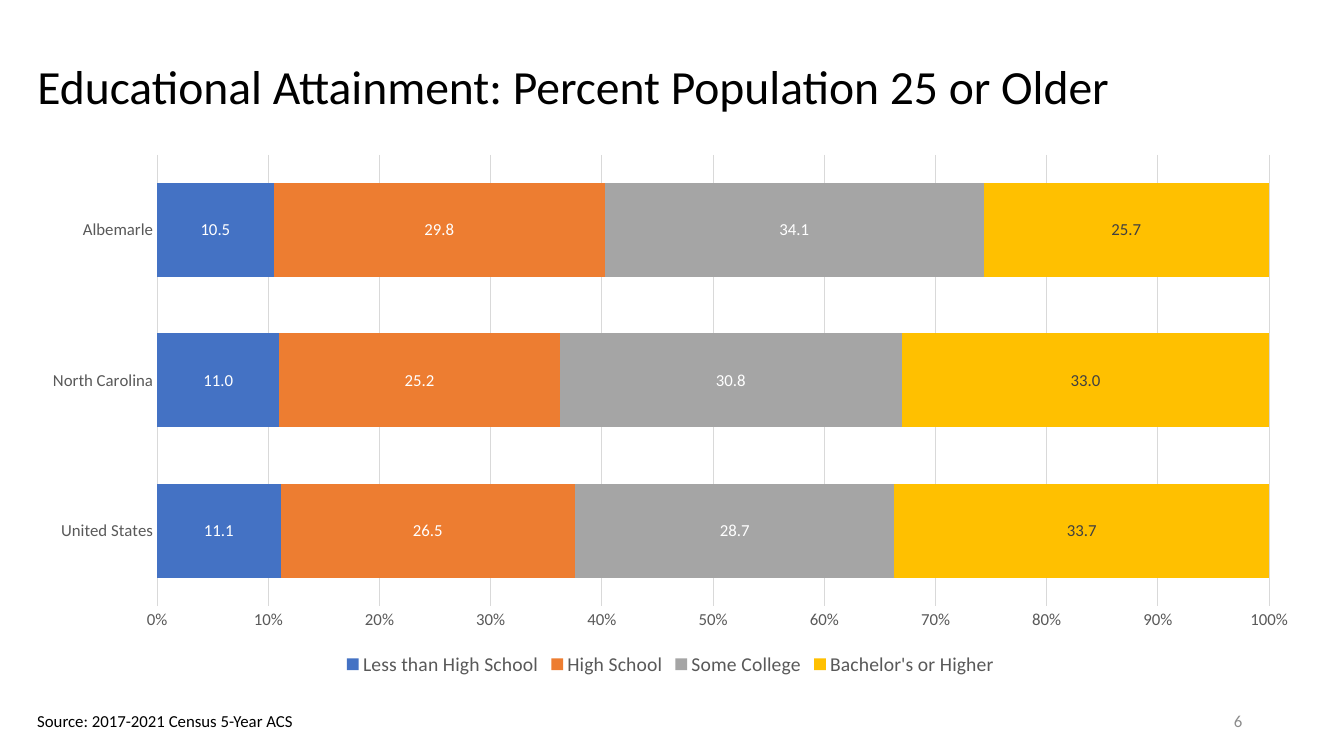
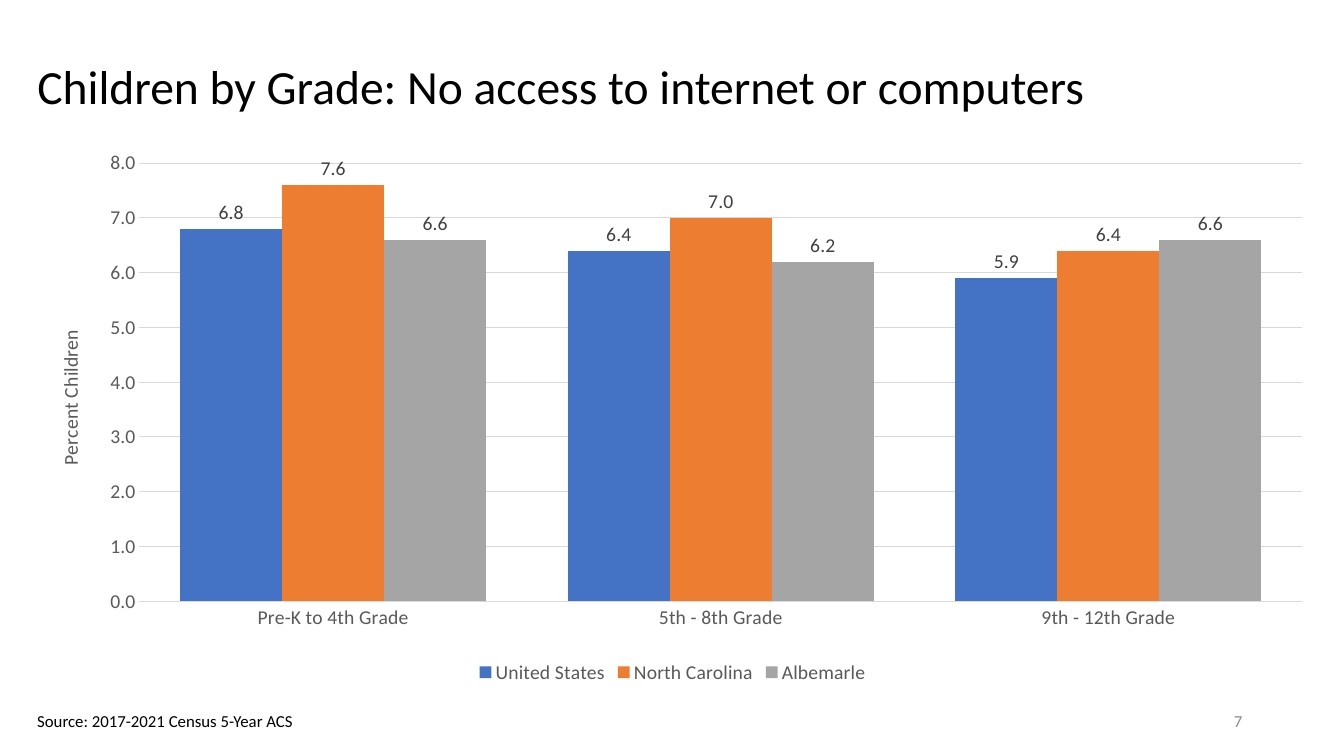
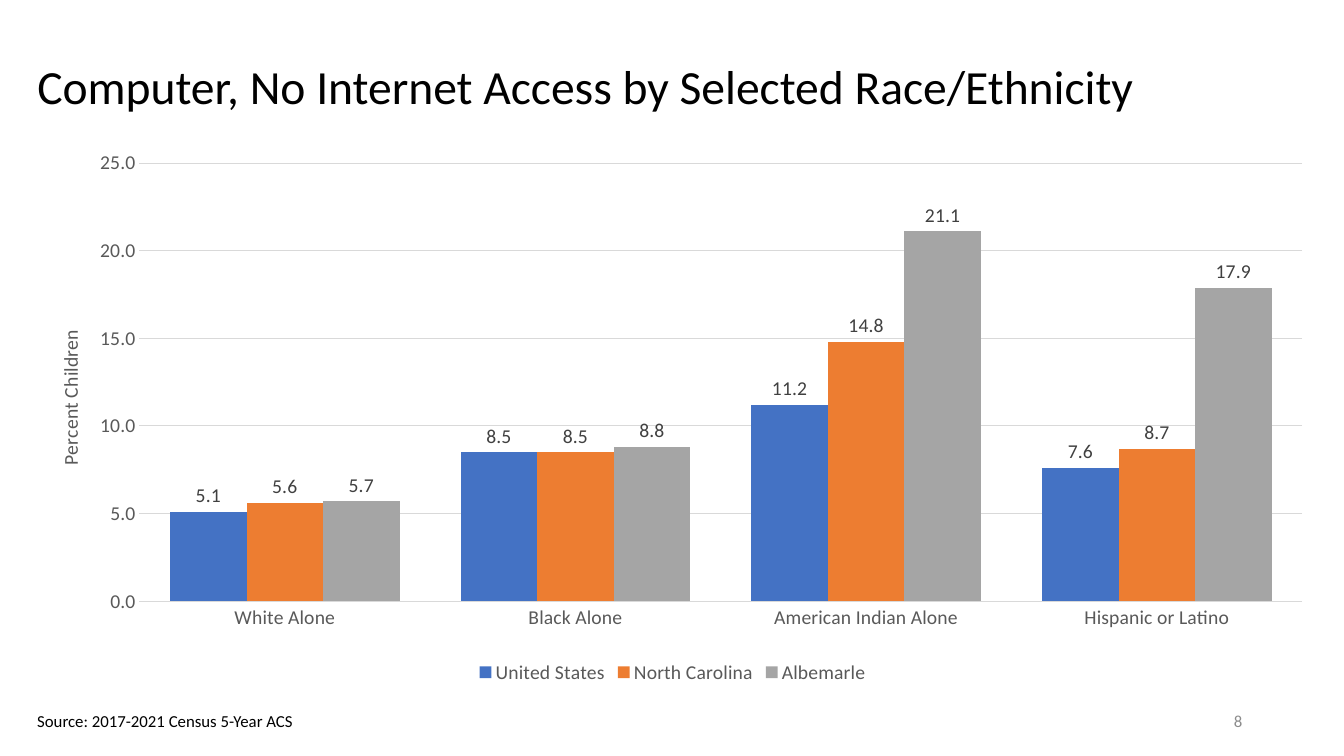
import pptx
import pptx.chart.data
import pptx.dml.color
import pptx.enum.chart
import pptx.enum.text
import pptx.oxml
import pptx.oxml.ns
import pptx.util

Inches, Pt = pptx.util.Inches, pptx.util.Pt
ChartType = pptx.enum.chart.XL_CHART_TYPE
LabelPosition = pptx.enum.chart.XL_LABEL_POSITION
Align = pptx.enum.text.PP_ALIGN

FONT = "Calibri"
COLORS = {
    "text": "000000", "axis": "595959", "grid": "D9D9D9", "number": "8C8C8C",
    "dark_label": "404040", "light_label": "FFFFFF",
}
SERIES_COLORS = ["4472C4", "ED7D31", "A5A5A5", "FFC000"]
NUMBER_FORMAT = "#,##0.0"
SOURCE = "Source: 2017-2021 Census 5-Year ACS"
FIRST_NUMBER = 6
LEFT, CHART_TOP = 0.27, 1.43

STACKED = {
    "type": ChartType.BAR_STACKED_100, "size": (12.76, 5.32), "font_size": 12, "gap": 60,
    "overlap": 100, "label_position": LabelPosition.CENTER, "axis_format": "0%",
    "label_colors": ["light_label"] * 3 + ["dark_label"],
}
CLUSTERED = {
    "type": ChartType.COLUMN_CLUSTERED, "size": (12.8, 5.4), "font_size": 14, "gap": 80,
    "overlap": 0, "label_position": LabelPosition.OUTSIDE_END, "axis_format": NUMBER_FORMAT,
    "label_colors": ["dark_label"] * 3, "axis_title": "Percent Children",
    "plot_area": {"x": 0.087, "y": 0.035, "w": 0.901, "h": 0.805},
    "title_position": {"x": 0.02, "y": 0.335},
}

SLIDES = [
    {
        "title": "Educational Attainment: Percent Population 25 or Older",
        "style": STACKED,
        "axis_range": (0, 1, 0.1),
        "categories": ["United States", "North Carolina", "Albemarle"],
        "series": {
            "Less than High School": [11.1, 11, 10.5],
            "High School": [26.5, 25.2, 29.8],
            "Some College": [28.7, 30.8, 34.1],
            "Bachelor's or Higher": [33.7, 33, 25.7],
        },
    },
    {
        "title": "Children by Grade: No access to internet or computers",
        "style": CLUSTERED,
        "axis_range": (0, 8, 1),
        "categories": ["Pre-K to 4th Grade", "5th - 8th Grade", "9th - 12th Grade"],
        "series": {
            "United States": [6.8, 6.4, 5.9],
            "North Carolina": [7.6, 7, 6.4],
            "Albemarle": [6.6, 6.2, 6.6],
        },
    },
    {
        "title": "Computer, No Internet Access by Selected Race/Ethnicity",
        "style": CLUSTERED,
        "axis_range": (0, 25, 5),
        "categories": ["White Alone", "Black Alone", "American Indian Alone", "Hispanic or Latino"],
        "series": {
            "United States": [5.1, 8.5, 11.2, 7.6],
            "North Carolina": [5.6, 8.5, 14.8, 8.7],
            "Albemarle": [5.7, 8.8, 21.1, 17.9],
        },
    },
]


def rgb(value):
    return pptx.dml.color.RGBColor.from_string(value)


def style_font(font, size, color):
    font.name, font.size, font.bold = FONT, Pt(size), False
    font.color.rgb = rgb(COLORS[color])


def style_line(line, color):
    line.color.rgb = rgb(COLORS[color])
    line.width = Pt(0.75)


def write(shape, text, size, color, align=Align.LEFT):
    shape.text_frame.text = text
    paragraph = shape.text_frame.paragraphs[0]
    paragraph.alignment = align
    style_font(paragraph.runs[0].font, size, color)
    return paragraph


def set_layout(parent, index, fractions, target=""):
    """Place a chart part by fractions of the chart area."""
    for layout in parent.findall(pptx.oxml.ns.qn("c:layout")):
        parent.remove(layout)
    modes = '<c:xMode val="edge"/><c:yMode val="edge"/>'
    values = "".join(f'<c:{key} val="{value}"/>' for key, value in fractions.items())
    parent.insert(index, pptx.oxml.parse_xml(
        f'<c:layout {pptx.oxml.ns.nsdecls("c")}><c:manualLayout>'
        f"{target}{modes}{values}</c:manualLayout></c:layout>"))


def add_axis_title(chart, style):
    text_frame = chart.value_axis.axis_title.text_frame
    text_frame.text = style["axis_title"]
    style_font(text_frame.paragraphs[0].runs[0].font, style["font_size"], "axis")
    title = chart._chartSpace.xpath(".//c:valAx/c:title")[0]
    body = title.xpath(".//a:bodyPr")[0]
    body.set("rot", "-5400000")
    body.set("vert", "horz")
    set_layout(title, 1, style["title_position"])


def style_axes(chart, style, axis_range):
    value_axis, category_axis = chart.value_axis, chart.category_axis
    for axis in (value_axis, category_axis):
        axis.major_tick_mark = axis.minor_tick_mark = pptx.enum.chart.XL_TICK_MARK.NONE
        style_font(axis.tick_labels.font, style["font_size"], "axis")
    style_line(category_axis.format.line, "grid")
    value_axis.format.line.fill.background()
    value_axis.has_major_gridlines = True
    style_line(value_axis.major_gridlines.format.line, "grid")
    value_axis.minimum_scale, value_axis.maximum_scale, value_axis.major_unit = axis_range
    value_axis.tick_labels.number_format = style["axis_format"]
    value_axis.tick_labels.number_format_is_linked = False


def add_chart(slide, content):
    style = content["style"]
    data = pptx.chart.data.CategoryChartData(number_format=NUMBER_FORMAT)
    data.categories = content["categories"]
    for name, values in content["series"].items():
        data.add_series(name, values)
    width, height = style["size"]
    chart = slide.shapes.add_chart(
        style["type"], Inches(LEFT), Inches(CHART_TOP), Inches(width), Inches(height), data).chart
    chart.has_title = False
    style_font(chart.font, style["font_size"], "text")
    chart.has_legend = True
    chart.legend.position = pptx.enum.chart.XL_LEGEND_POSITION.BOTTOM
    chart.legend.include_in_layout = False
    style_font(chart.legend.font, 14, "axis")
    style_axes(chart, style, content["axis_range"])

    plot = chart.plots[0]
    plot.gap_width, plot.overlap = style["gap"], style["overlap"]
    plot.vary_by_categories = False
    for series, color, label_color in zip(plot.series, SERIES_COLORS, style["label_colors"]):
        series.format.fill.solid()
        series.format.fill.fore_color.rgb = rgb(color)
        labels = series.data_labels
        labels.show_value = True
        labels.number_format, labels.number_format_is_linked = NUMBER_FORMAT, False
        labels.position = style["label_position"]
        style_font(labels.font, style["font_size"], label_color)

    if "axis_title" in style:
        add_axis_title(chart, style)
        set_layout(chart._chartSpace.xpath(".//c:plotArea")[0], 0, style["plot_area"],
                   '<c:layoutTarget val="inner"/>')


def add_frame(slide, title, number):
    """Add the title, source line and slide number that every slide has."""
    shape = slide.shapes.title
    shape.left, shape.top, shape.width, shape.height = map(Inches, (LEFT, 0.34, 12.76, 1.09))
    write(shape, title, 34, "text").line_spacing = 0.9
    shape.text_frame.auto_size = pptx.enum.text.MSO_AUTO_SIZE.NONE
    shape.text_frame.vertical_anchor = pptx.enum.text.MSO_ANCHOR.MIDDLE

    source = slide.shapes.add_textbox(*map(Inches, (LEFT, 7, 2.78, 0.3)))
    write(source, SOURCE, 12, "text")
    source.text_frame.word_wrap = False

    number_box = slide.shapes.add_textbox(*map(Inches, (9.42, 6.95, 3, 0.4)))
    write(number_box, str(number), 12, "number", Align.RIGHT)
    number_box.text_frame.word_wrap = True
    number_box.text_frame.vertical_anchor = pptx.enum.text.MSO_ANCHOR.MIDDLE


def main():
    presentation = pptx.Presentation()
    presentation.slide_width, presentation.slide_height = Inches(13.33), Inches(7.5)
    title_only = presentation.slide_layouts.get_by_name("Title Only")
    for number, content in enumerate(SLIDES, FIRST_NUMBER):
        slide = presentation.slides.add_slide(title_only)
        add_frame(slide, content["title"], number)
        add_chart(slide, content)
    presentation.save("out.pptx")


if __name__ == "__main__":
    main()
